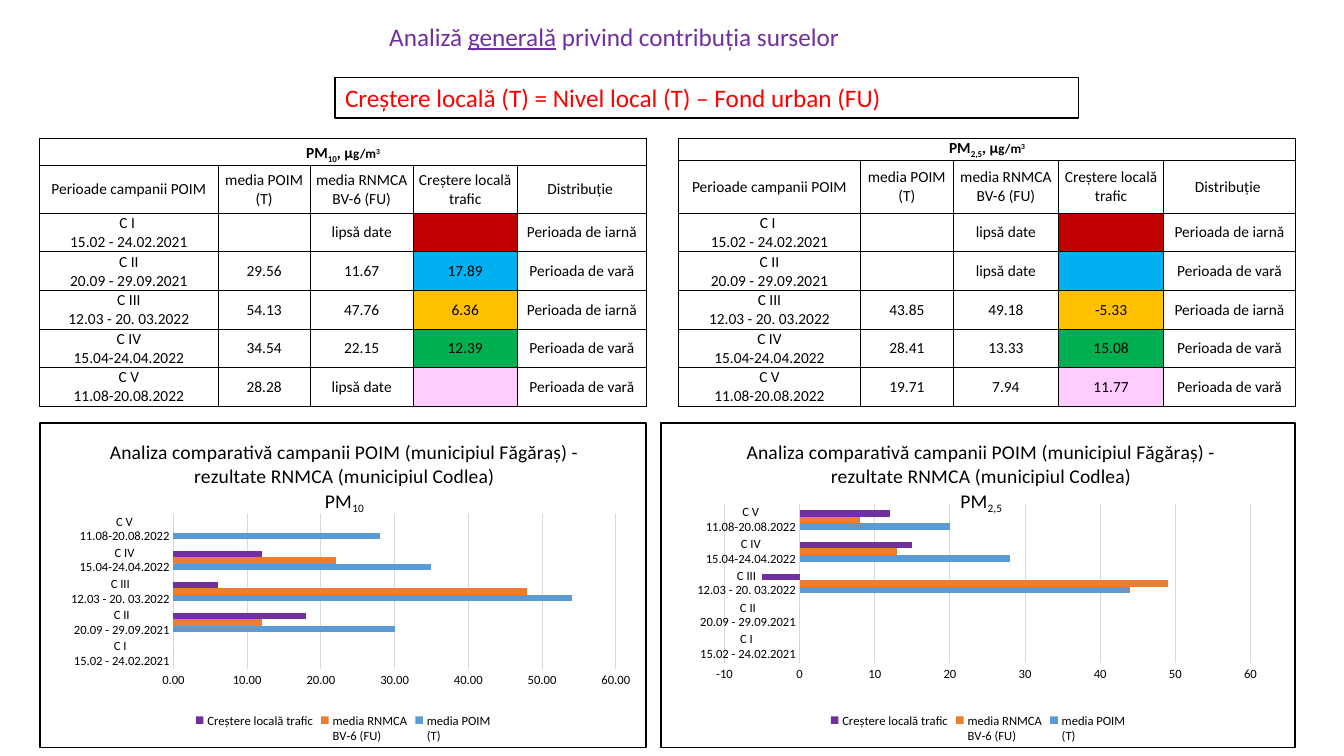
from dataclasses import dataclass

from lxml.etree import SubElement
from pptx import Presentation
from pptx.chart.data import CategoryChartData
from pptx.dml.color import RGBColor
from pptx.enum.chart import XL_CHART_TYPE, XL_LEGEND_POSITION, XL_TICK_MARK
from pptx.enum.shapes import MSO_SHAPE
from pptx.enum.text import MSO_ANCHOR, MSO_AUTO_SIZE, PP_ALIGN
from pptx.oxml import parse_xml
from pptx.oxml.ns import nsdecls, qn
from pptx.util import Emu, Inches, Pt

BARS = XL_CHART_TYPE.BAR_CLUSTERED
BELOW = XL_LEGEND_POSITION.BOTTOM
NO_TICK = XL_TICK_MARK.NONE
RECT = MSO_SHAPE.RECTANGLE
LEFT, CENTER = PP_ALIGN.LEFT, PP_ALIGN.CENTER
MIDDLE, BOTTOM = MSO_ANCHOR.MIDDLE, MSO_ANCHOR.BOTTOM
FIXED = MSO_AUTO_SIZE.NONE

WIDE, HIGH = Inches(13.33), Inches(7.5)
BLACK, WHITE, GREY, RED, PURPLE = "000000", "FFFFFF", "D9D9D9", "FF0000", "7030A0"
LACK = "lipsă date"
BLANKS = {"": None, LACK: 0}
HEADS = ["Perioade campanii POIM", "media POIM\n(T)", "media RNMCA\nBV-6 (FU)",
         "Creștere locală trafic", "Distribuție "]
TERMS = ["C I \n15.02 - 24.02.2021", "C II\n20.09 - 29.09.2021", "C III\n12.03 - 20. 03.2022",
         "C IV\n15.04-24.04.2022", "C V\n11.08-20.08.2022"]
TIMES = ["iarnă", "vară", "iarnă", "vară", "vară"]
FILLS = ["C00000", "00B0F0", "FFC000", "00B050", "FFCCFF"]
TINTS = ["5B9BD5", "ED7D31", PURPLE]
COLS = [1.78, 0.91, 1.03, 1.03, 1.29]
CELL = {"margin_left": Pt(0.5), "margin_right": Pt(0.5), "margin_top": Pt(0.4),
        "margin_bottom": 0}


@dataclass
class Box:
    left: float
    top: float
    width: float
    height: float

    def place(self) -> list[Emu]:
        pairs = zip((self.left, self.top, self.width, self.height), (WIDE, HIGH) * 2)
        return [Emu(round(share * full / 100)) for share, full in pairs]


@dataclass
class Run:
    text: str
    size: float
    tint: str = BLACK
    bold: bool = False
    line: bool = False
    base: int = 0


@dataclass
class Panel:
    sub: str
    grid: Box
    rows: list[float]
    data: list[list[str]]
    graph: Box
    plot: list[float]
    title: list[float]
    low: int
    form: str


PANELS = [
    Panel("10", Box(2.93, 18.27, 45.2, 35.07), [27, 48] + [38] * 5,
          [["", LACK, ""], ["29.56", "11.67", "17.89"], ["54.13", "47.76", "6.36"],
           ["34.54", "22.15", "12.39"], ["28.28", LACK, ""]],
          Box(2.93, 55.87, 45.2, 43.07), [0.22, 0.28, 0.73, 0.48], [0.11, 0.04], 0, "0.00"),
    Panel("2,5", Box(50.49, 18.27, 45.91, 35.07), [22, 53] + [38] * 5,
          [["", LACK, ""], ["", LACK, ""], ["43.85", "49.18", "-5.33"],
           ["28.41", "13.33", "15.08"], ["19.71", "7.94", "11.77"]],
          Box(49.14, 55.87, 47.26, 43.07), [0.1, 0.25, 0.83, 0.49], [0.13, 0.04], -10, "General"),
]


def hue(code: str) -> RGBColor:
    return RGBColor.from_string(code)


def put(item, vals: dict) -> None:
    for key, val in vals.items():
        setattr(item, key, val)


def paint(fill, code: str) -> None:
    fill.solid()
    fill.fore_color.rgb = hue(code)


def style(font, run: Run) -> None:
    put(font, {"name": "Calibri", "size": Pt(run.size), "bold": run.bold, "underline": run.line})
    font.color.rgb = hue(run.tint)


def write(para, runs: list[Run], align=CENTER) -> None:
    para.alignment = align
    for run in runs:
        for part, text in enumerate(run.text.split("\n")):
            if part:
                para.add_line_break()
                mark = para._p.findall(qn("a:br"))[-1]
                SubElement(mark, qn("a:rPr"), sz=str(round(run.size * 100)))
            bit = para.add_run()
            bit.text = text
            style(bit.font, run)
            if run.base:
                bit.font._element.set("baseline", str(run.base * 1000))


def edge(cell, sides: dict[str, float]) -> None:
    props = cell._tc.get_or_add_tcPr()
    for spot, (side, size) in enumerate(sides.items()):
        props.insert(spot, parse_xml(
            f'<a:{side} {nsdecls("a")} w="{round(size * 12700)}"><a:solidFill>'
            f'<a:srgbClr val="{BLACK}"/></a:solidFill></a:{side}>'))


def draw_grid(slide, panel: Panel) -> None:
    left, top, width, height = panel.grid.place()
    frame = slide.shapes.add_table(7, 5, left, top, width, height)
    table = frame.table
    put(table, {"first_row": False, "horz_banding": False})
    for col, share in zip(table.columns, COLS):
        col.width = Emu(round(width * share / sum(COLS)))
    for row, share in zip(table.rows, panel.rows):
        row.height = Emu(round(height * share / sum(panel.rows)))
    head = [Run("PM", 11, bold=True), Run(panel.sub, 11, bold=True, base=-25),
            Run(", µ", 11, bold=True), Run("g/m", 9.4, bold=True),
            Run("3", 9.4, bold=True, base=30)]
    body = [[term, *vals, f"Perioada de {time}"]
            for term, vals, time in zip(TERMS, panel.data, TIMES)]
    table.cell(0, 0).merge(table.cell(0, 4))
    for r, line in enumerate([[""] * 5, HEADS, *body]):
        for c, text in enumerate(line):
            cell = table.cell(r, c)
            put(cell, CELL | {"vertical_anchor": MIDDLE if r else BOTTOM})
            if r > 1 and c == 3:
                paint(cell.fill, FILLS[r - 2])
            else:
                cell.fill.background()
            edge(cell, {"lnL": 0.5 if c else 1, "lnR": 1 if c == 4 or r == 0 else 0.5,
                        "lnT": 0.5 if r else 1, "lnB": 1 if r == 6 else 0.5})
            if text:
                write(cell.text_frame.paragraphs[0], [Run(text, 11)])
    write(table.cell(0, 0).text_frame.paragraphs[0], head)


def pin(host, spots: dict[str, float], inner: bool = False) -> None:
    for old in host.findall(qn("c:layout")):
        host.remove(old)
    modes = '<c:layoutTarget val="inner"/>' if inner else ""
    modes += '<c:xMode val="edge"/><c:yMode val="edge"/>'
    sizes = "".join(f'<c:{key} val="{val}"/>' for key, val in spots.items())
    node = parse_xml(f'<c:layout {nsdecls("c")}><c:manualLayout>{modes}{sizes}'
                     '</c:manualLayout></c:layout>')
    text = host.find(qn("c:tx"))
    if text is None:
        host.insert(0, node)
    else:
        text.addnext(node)


def draw_graph(slide, panel: Panel) -> None:
    data = CategoryChartData()
    data.categories = TERMS
    for name, vals in zip(HEADS[1:4], zip(*panel.data)):
        data.add_series(name, [BLANKS[v] if v in BLANKS else round(float(v)) for v in vals])
    chart = slide.shapes.add_chart(BARS, *panel.graph.place(), data).chart
    style(chart.font, Run("", 10))
    chart._chartSpace.find(qn("c:chart")).addnext(parse_xml(
        f'<c:spPr {nsdecls("c", "a")}><a:solidFill><a:srgbClr val="{WHITE}"/></a:solidFill>'
        f'<a:ln w="12700"><a:solidFill><a:srgbClr val="{BLACK}"/></a:solidFill></a:ln></c:spPr>'))
    put(chart, {"has_title": True, "has_legend": True})
    text = chart.chart_title.text_frame
    write(text.paragraphs[0], [Run("Analiza comparativă campanii POIM (municipiul Făgăraș) - "
                                   "rezultate RNMCA (municipiul Codlea)", 14)])
    write(text.add_paragraph(), [Run("PM", 14), Run(panel.sub, 14, base=-25)])
    pin(chart.chart_title._element, dict(zip("xy", panel.title)))
    pin(chart._chartSpace.find(".//" + qn("c:plotArea")), dict(zip("xywh", panel.plot)), True)
    put(chart.legend, {"position": BELOW, "include_in_layout": False})
    put(chart.plots[0], {"gap_width": 182, "vary_by_categories": False})
    cats, vals = chart.category_axis, chart.value_axis
    for axis in (cats, vals):
        put(axis, {"major_tick_mark": NO_TICK, "minor_tick_mark": NO_TICK})
    for part in (cats.tick_labels, vals.tick_labels, chart.legend):
        style(part.font, Run("", 9))
    put(vals, {"minimum_scale": panel.low, "maximum_scale": 60, "major_unit": 10})
    put(vals.tick_labels, {"number_format": panel.form, "number_format_is_linked": False})
    vals.format.line.fill.background()
    for line in (cats.format.line, vals.major_gridlines.format.line):
        paint(line.fill, GREY)
        line.width = Pt(0.75)
    for bars, tint in zip(chart.plots[0].series, TINTS):
        paint(bars.format.fill, tint)
        bars.invert_if_negative = False


def main() -> None:
    deck = Presentation()
    put(deck, {"slide_width": WIDE, "slide_height": HIGH})
    slide = deck.slides.add_slide(deck.slide_layouts[5])
    title = slide.shapes.title
    put(title, dict(zip(("left", "top", "width", "height"),
                        Box(28.21, 2.13, 35.18, 5.33).place())))
    put(title.text_frame, {"word_wrap": False, "auto_size": FIXED})
    write(title.text_frame.paragraphs[0],
          [Run("Analiză ", 18, PURPLE), Run("generală", 18, PURPLE, line=True),
           Run(" privind contribuția surselor", 18, PURPLE)], LEFT)
    rule = slide.shapes.add_shape(RECT, *Box(24.94, 10.27, 55.29, 5.33).place())
    rule.shadow.inherit = False
    paint(rule.fill, WHITE)
    paint(rule.line.fill, BLACK)
    rule.line.width = Pt(1)
    put(rule.text_frame, {"word_wrap": True, "vertical_anchor": MIDDLE})
    write(rule.text_frame.paragraphs[0],
          [Run("Creștere locală (T) = Nivel local (T) – Fond urban (FU)", 18, RED)], LEFT)
    for panel in PANELS:
        draw_grid(slide, panel)
        draw_graph(slide, panel)
    deck.save("out.pptx")


if __name__ == "__main__":
    main()
